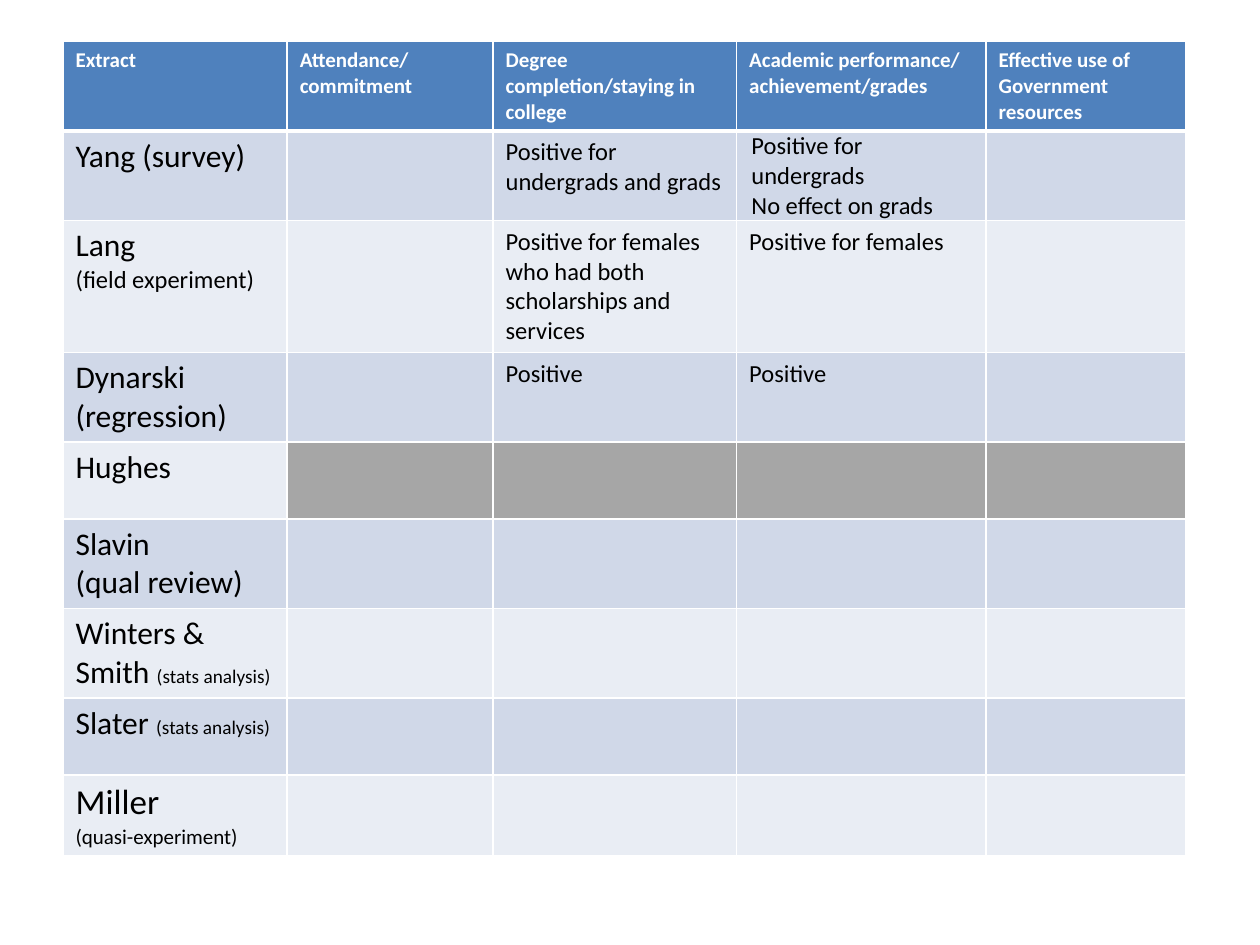
"""Build a slide with a table of study findings by outcome."""
from dataclasses import dataclass

from lxml import etree
from pptx import Presentation
from pptx.dml.color import RGBColor
from pptx.oxml.ns import qn
from pptx.table import _Cell
from pptx.util import Cm, Pt

WHITE = RGBColor(0xFF, 0xFF, 0xFF)
BLACK = RGBColor(0x00, 0x00, 0x00)
HEADER_BLUE = RGBColor(0x4F, 0x81, 0xBD)
BAND_DARK = RGBColor(0xD0, 0xD8, 0xE8)
BAND_LIGHT = RGBColor(0xE9, 0xED, 0xF4)
GREY = RGBColor(0xA6, 0xA6, 0xA6)
FONT = "Calibri"
COLUMN_WIDTHS = (4.52, 4.15, 4.91, 5.03, 4.02)
ROW_HEIGHT = 1.55


@dataclass(frozen=True)
class Span:
    text: str
    size: int


Lines = tuple[tuple[Span, ...], ...]


@dataclass(frozen=True)
class Study:
    name: Lines
    completion: Lines = ()
    performance: Lines = ()
    greyed: bool = False
    tight_performance: bool = False


def lines(size: int, *texts: str) -> Lines:
    return tuple((Span(text, size),) for text in texts)


HEADERS = (
    lines(12, "Extract"),
    lines(12, "Attendance/", "commitment"),
    lines(12, "Degree completion/staying in college"),
    lines(12, "Academic performance/", "achievement/grades"),
    lines(12, "Effective use of Government resources"),
)

STUDIES = (
    Study(
        lines(18, "Yang (survey)"),
        lines(14, "Positive for undergrads and grads"),
        lines(14, "Positive for undergrads", "No effect on grads"),
        tight_performance=True,
    ),
    Study(
        lines(18, "Lang") + lines(14, "(field experiment)"),
        lines(14, "Positive for females who had both scholarships and services"),
        lines(14, "Positive for females"),
    ),
    Study(lines(18, "Dynarski", "(regression)"), lines(14, "Positive"), lines(14, "Positive")),
    Study(lines(18, "Hughes"), greyed=True),
    Study(lines(18, "Slavin", "(qual review)")),
    Study(((Span("Winters & Smith ", 18), Span("(stats analysis)", 11)),)),
    Study(((Span("Slater ", 18), Span("(stats analysis)", 11)),)),
    Study(lines(20, "Miller") + lines(12, "(quasi-experiment)")),
)


def add_borders(cell: _Cell, top: int, bottom: int) -> None:
    properties = cell._tc.get_or_add_tcPr()
    for side, width in (("L", 1), ("R", 1), ("T", top), ("B", bottom)):
        line = etree.SubElement(properties, qn(f"a:ln{side}"), w=str(Pt(width)))
        fill = etree.SubElement(line, qn("a:solidFill"))
        etree.SubElement(fill, qn("a:srgbClr"), val=str(WHITE))


def write_cell(cell: _Cell, content: Lines, color: RGBColor, bold: bool) -> None:
    frame = cell.text_frame
    for index, spans in enumerate(content):
        para = frame.add_paragraph() if index else frame.paragraphs[0]
        for span in spans:
            run = para.add_run()
            run.text = span.text
            run.font.name = FONT
            run.font.size = Pt(span.size)
            run.font.bold = bold
            run.font.color.rgb = color


def paint_cell(cell: _Cell, fill: RGBColor, top: int = 1, bottom: int = 1) -> None:
    add_borders(cell, top, bottom)
    cell.fill.solid()
    cell.fill.fore_color.rgb = fill


def main() -> None:
    deck = Presentation()
    deck.slide_width, deck.slide_height = Cm(25.4), Cm(19.05)
    page = deck.slides.add_slide(deck.slide_layouts[6])
    row_count = len(STUDIES) + 1
    table = page.shapes.add_table(
        row_count, len(HEADERS), Cm(1.27), Cm(0.84),
        Cm(sum(COLUMN_WIDTHS)), Cm(ROW_HEIGHT * row_count),
    ).table
    for column, width in zip(table.columns, COLUMN_WIDTHS):
        column.width = Cm(width)
    for row in table.rows:
        row.height = Cm(ROW_HEIGHT)

    for column, header in enumerate(HEADERS):
        cell = table.cell(0, column)
        paint_cell(cell, HEADER_BLUE, bottom=3)
        write_cell(cell, header, WHITE, True)

    for row, study in enumerate(STUDIES, start=1):
        band = BAND_DARK if row % 2 else BAND_LIGHT
        contents = (study.name, (), study.completion, study.performance, ())
        for column, content in enumerate(contents):
            cell = table.cell(row, column)
            fill = GREY if study.greyed and column else band
            paint_cell(cell, fill, top=3 if row == 1 else 1)
            write_cell(cell, content, BLACK, False)
        if study.tight_performance:
            cell = table.cell(row, 3)
            cell.margin_left = cell.margin_right = Cm(0.3)
            cell.margin_top = cell.margin_bottom = Cm(0)

    deck.save("out.pptx")


if __name__ == "__main__":
    main()
